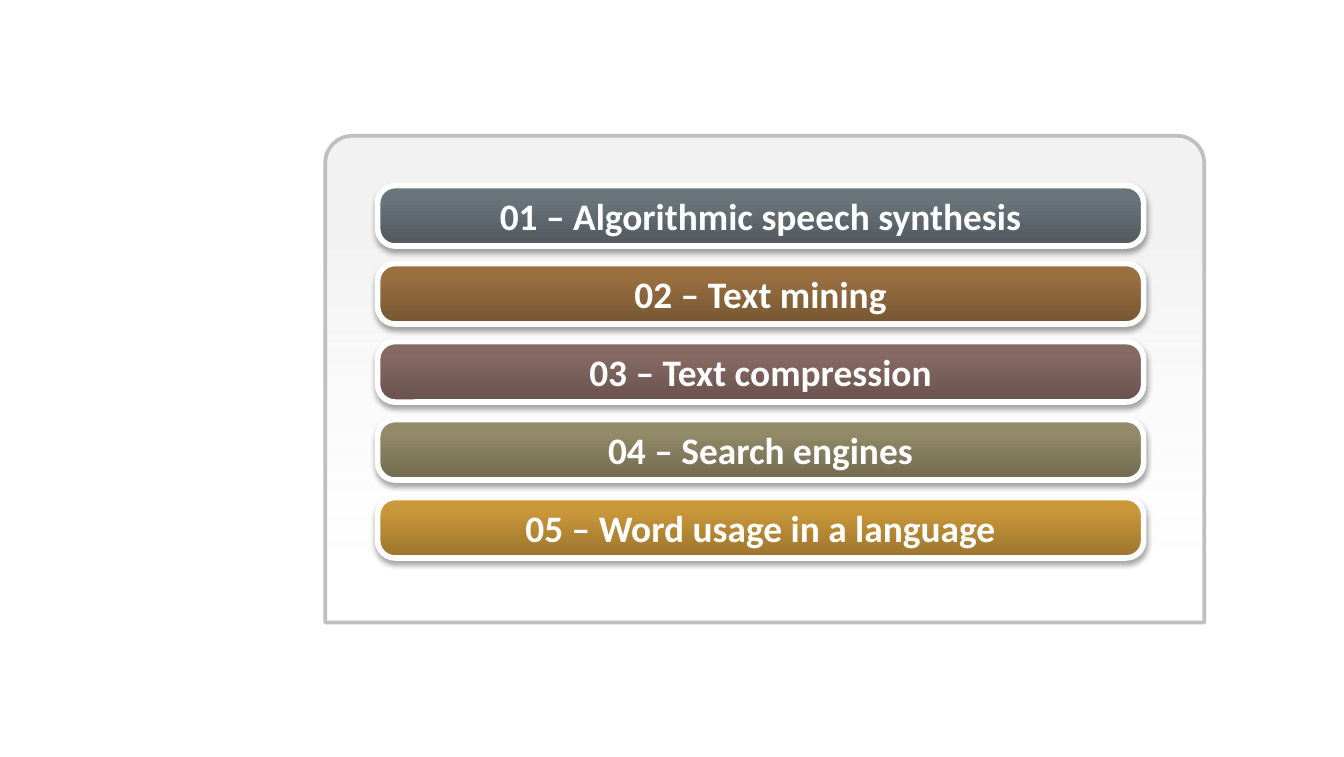
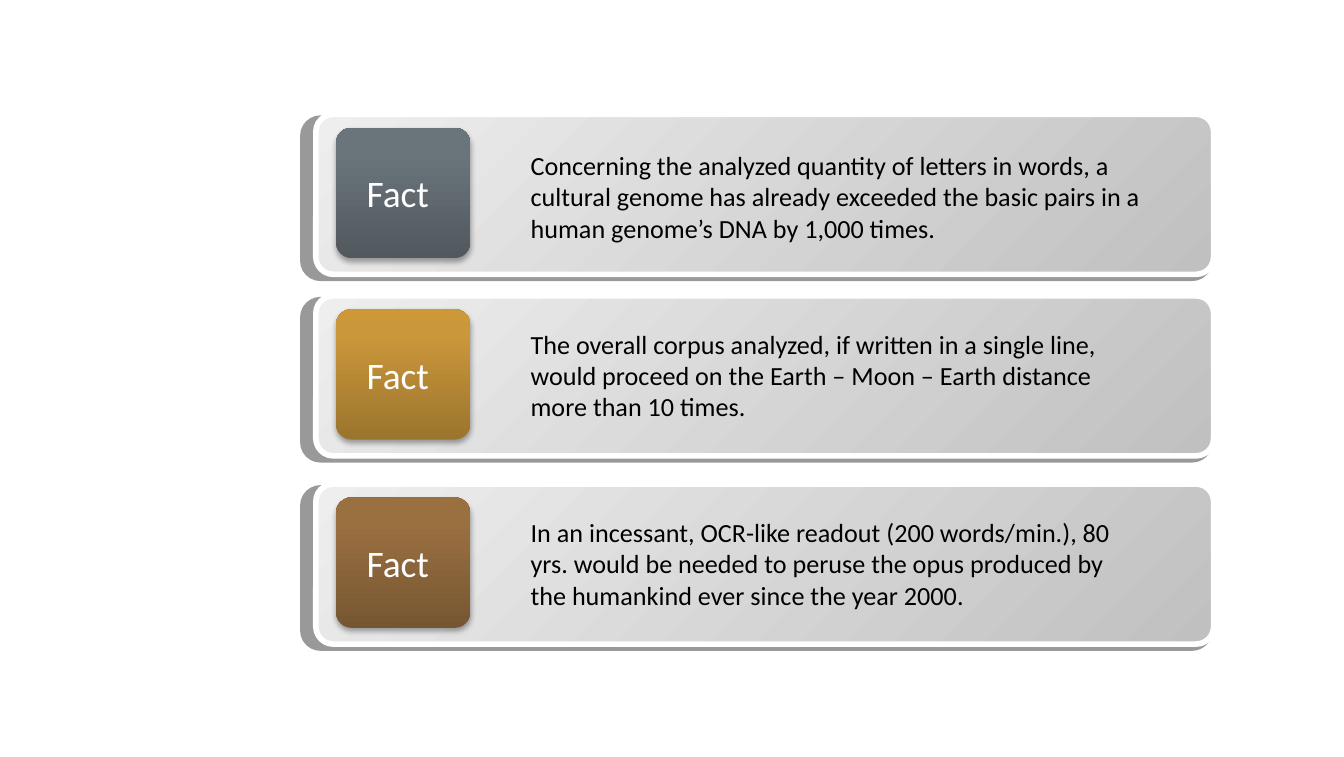
from lxml import etree
from pptx import Presentation
from pptx.dml.color import RGBColor
from pptx.enum import shapes as kinds, text as txt
from pptx.oxml.ns import qn
from pptx.util import Inches, Pt

FONT = "Calibri"
WHITE, BLACK, PANEL_EDGE = "FFFFFF", "000000", "BFBFBF"
ROUNDED = kinds.MSO_SHAPE.ROUNDED_RECTANGLE

# Gradient stops: position in percent, colour, optional opacity in percent
SLATE = [(0, "51595F"), (80, "6A747B"), (100, "6A747C")]
BROWN = [(0, "765632"), (80, "9A7041"), (100, "9C7140")]
MAUVE = [(0, "68524D"), (80, "876A64"), (100, "886A63")]
OLIVE = [(0, "716A50"), (80, "928A68"), (100, "948B67")]
GOLD = [(0, "9B742D"), (80, "CA973A"), (100, "CD9938")]
PANEL = [(20, "F2F2F2"), (100, "FFFFFF", 0)]
SILVER = [(0, "EEEEEE"), (100, "C0C0C0")]

SOFT_SHADOW = dict(opacity=35, blur=3.1, distance=1.8, angle=90)
CARD_SHADOW = dict(opacity=40, blur=0, distance=3, angle=135, sx="101000", algn="tr")

TOPICS = [
    ("01 – Algorithmic speech synthesis", SLATE),
    ("02 – Text mining", BROWN),
    ("03 – Text compression", MAUVE),
    ("04 – Search engines", OLIVE),
    ("05 – Word usage in a language", GOLD),
]
TOPIC_TOP, TOPIC_PITCH = 1.38, 0.58

# Card top, statement top, badge colours, statement
FACTS = [
    (0.85, 1.06, SLATE,
     "Concerning the analyzed quantity of letters in words, a cultural genome has "
     "already exceeded the basic pairs in a human genome’s DNA by 1,000 times."),
    (2.2, 2.39, GOLD,
     "The overall corpus analyzed, if written in a single line, would proceed on "
     "the Earth – Moon – Earth distance more than 10 times."),
    (3.6, 3.79, BROWN,
     "In an incessant, OCR-like readout (200 words/min.), 80 yrs. would be needed "
     "to peruse the opus produced by the humankind ever since the year 2000."),
]


def rgb(value):
    return RGBColor.from_string(value)


def add_colour(parent, value, opacity=100):
    colour = etree.SubElement(parent, qn("a:srgbClr"), val=value)
    if opacity < 100:
        etree.SubElement(colour, qn("a:alpha"), val=str(opacity * 1000))


def fill_gradient(shape, stops, angle):
    shape.fill.background()
    properties = shape._element.spPr
    gradient = etree.Element(qn("a:gradFill"), rotWithShape="1")
    stop_list = etree.SubElement(gradient, qn("a:gsLst"))
    for position, *colour in stops:
        stop = etree.SubElement(stop_list, qn("a:gs"), pos=str(position * 1000))
        add_colour(stop, *colour)
    etree.SubElement(gradient, qn("a:lin"), ang=str(angle * 60000), scaled="0")
    properties.replace(properties.find(qn("a:noFill")), gradient)


def cast_shadow(shape, opacity, blur, distance, angle, **scaling):
    effects = shape._element.spPr.find(qn("a:effectLst"))
    shadow = etree.SubElement(
        effects, qn("a:outerShdw"), blurRad=str(Pt(blur)), dist=str(Pt(distance)),
        dir=str(angle * 60000), rotWithShape="0", **scaling)
    add_colour(shadow, BLACK, opacity)


def add_block(parent, kind, box, corner, stops, angle, edge=None, shadow=None):
    """Add a gradient shape; edge is (colour, points)."""
    block = parent.shapes.add_shape(kind, *map(Inches, box))
    block.adjustments[0] = corner
    block.shadow.inherit = False
    fill_gradient(block, stops, angle)
    if edge:
        block.line.color.rgb = rgb(edge[0])
        block.line.width = Pt(edge[1])
    else:
        block.line.fill.background()
    if shadow:
        cast_shadow(block, **shadow)
    return block


def write(shape, wording, size, colour, bold=False, wrap=False):
    frame = shape.text_frame
    frame.text = wording
    frame.word_wrap = wrap
    font = frame.paragraphs[0].runs[0].font
    font.name, font.size, font.bold = FONT, Pt(size), bold
    font.color.rgb = rgb(colour)
    return frame


def add_label(parent, box, wording, size, colour, wrap=False):
    label = parent.shapes.add_textbox(*map(Inches, box))
    frame = write(label, wording, size, colour, wrap=wrap)
    frame.auto_size = txt.MSO_AUTO_SIZE.SHAPE_TO_FIT_TEXT


def add_topic(slide, top, wording, stops):
    bar = add_block(slide, ROUNDED, (2.81, top, 5.7, 0.45), 0.288, stops, 270,
                    (WHITE, 3), SOFT_SHADOW)
    frame = write(bar, wording, 20, WHITE, bold=True)
    frame.margin_left = frame.margin_right = frame.margin_top = frame.margin_bottom = 0
    frame.vertical_anchor = txt.MSO_ANCHOR.MIDDLE
    frame.paragraphs[0].alignment = txt.PP_ALIGN.CENTER


def add_fact(slide, top, statement_top, stops, statement):
    add_block(slide, ROUNDED, (2.35, top, 6.68, 1.19), 0.109, SILVER, 45,
              (WHITE, 3), CARD_SHADOW)
    badge = slide.shapes.add_group_shape()
    add_block(badge, ROUNDED, (2.5, top + 0.1, 1, 0.97), 0.119, stops, 270,
              shadow=SOFT_SHADOW)
    add_label(badge, (2.63, top + 0.37, 0.67, 0.44), "Fact", 20, WHITE)
    add_label(slide, (3.85, statement_top, 4.74, 0.81), statement, 14, BLACK, wrap=True)


def main():
    deck = Presentation()
    deck.slide_width, deck.slide_height = Inches(10), Inches(5.63)
    blank = deck.slide_layouts[6]

    topics = deck.slides.add_slide(blank)
    add_block(topics, kinds.MSO_SHAPE.ROUND_2_SAME_RECTANGLE, (2.42, 1.01, 6.54, 3.62),
              0.056, PANEL, 90, (PANEL_EDGE, 2))
    for row, (wording, stops) in enumerate(TOPICS):
        add_topic(topics, TOPIC_TOP + row * TOPIC_PITCH, wording, stops)

    facts = deck.slides.add_slide(blank)
    for fact in FACTS:
        add_fact(facts, *fact)

    deck.save("out.pptx")


if __name__ == "__main__":
    main()
